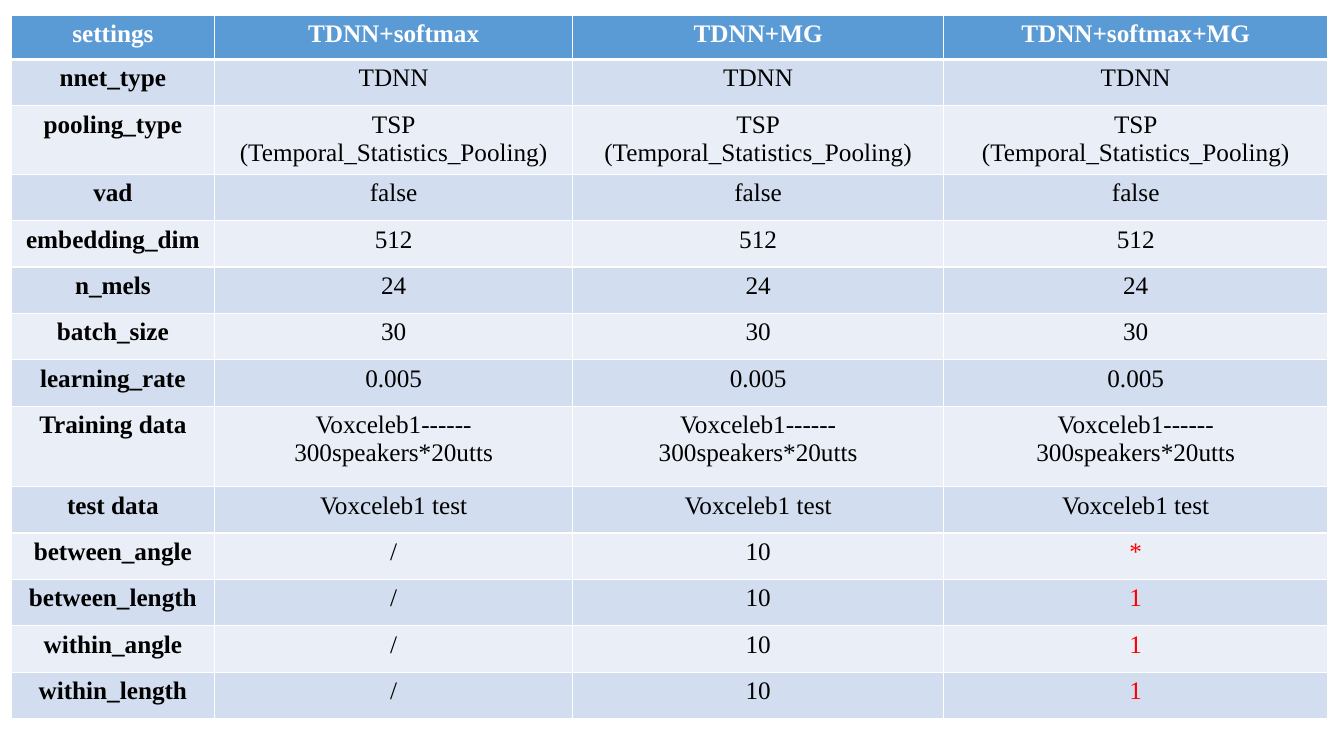
from lxml.etree import SubElement
from pptx import Presentation
from pptx.dml.color import RGBColor
from pptx.enum.text import MSO_ANCHOR, PP_ALIGN
from pptx.oxml.ns import qn
from pptx.util import Inches, Pt

COLORS = {
    "header": "5B9BD5",
    "odd": "D2DEEF",
    "even": "EAEFF7",
    "border": "FFFFFF",
    "header_text": "FFFFFF",
    "text": "000000",
    "highlight": "FF0000",
}
COL_WIDTHS = [2.02, 3.55, 3.68, 3.81]
ROW_HEIGHT = 0.46
SPECIAL_HEIGHTS = {"settings": 0.44, "pooling_type": 0.68, "Training data": 0.8}

HEADER = ["settings", "TDNN+softmax", "TDNN+MG", "TDNN+softmax+MG"]
SHARED_SETTINGS = [
    ("nnet_type", "TDNN"),
    ("pooling_type", "TSP\n(Temporal_Statistics_Pooling)"),
    ("vad", "false"),
    ("embedding_dim", "512"),
    ("n_mels", "24"),
    ("batch_size", "30"),
    ("learning_rate", "0.005"),
    ("Training data", "Voxceleb1------\n300speakers*20utts"),
    ("test data", "Voxceleb1 test"),
]
MARGIN_SETTINGS = [
    ("between_angle", "*"),
    ("between_length", "1"),
    ("within_angle", "1"),
    ("within_length", "1"),
]


class SlideBuilder:
    def __init__(self, slide, font="Times New Roman", size=18):
        self.slide = slide
        self.font = font
        self.size = size

    def color(self, name):
        return RGBColor.from_string(COLORS[name])

    def add_borders(self, cell, top=1, bottom=1):
        tc_pr = cell._tc.get_or_add_tcPr()
        for side, width in (("L", 1), ("R", 1), ("T", top), ("B", bottom)):
            ln = SubElement(tc_pr, qn(f"a:ln{side}"), w=str(Pt(width)))
            fill = SubElement(ln, qn("a:solidFill"))
            SubElement(fill, qn("a:srgbClr"), val=COLORS["border"])

    def write_cell(self, cell, text, color, bold):
        """Put each line of text in its own centred paragraph."""
        cell.vertical_anchor = MSO_ANCHOR.TOP
        tf = cell.text_frame
        for i, line in enumerate(text.split("\n")):
            p = tf.add_paragraph() if i else tf.paragraphs[0]
            p.alignment = PP_ALIGN.CENTER
            r = p.add_run()
            r.text = line
            r.font.name = self.font
            r.font.size = Pt(self.size)
            r.font.bold = bold
            r.font.color.rgb = self.color(color)

    def add_table(self, rows, left, top, highlighted):
        """Draw a banded table; highlighted labels get a red last column."""
        heights = [SPECIAL_HEIGHTS.get(row[0], ROW_HEIGHT) for row in rows]
        table = self.slide.shapes.add_table(
            len(rows), len(COL_WIDTHS), Inches(left), Inches(top),
            Inches(sum(COL_WIDTHS)), Inches(sum(heights))).table
        for column, width in zip(table.columns, COL_WIDTHS):
            column.width = Inches(width)
        for i, (row, height) in enumerate(zip(rows, heights)):
            table.rows[i].height = Inches(height)
            band = "header" if i == 0 else "odd" if i % 2 else "even"
            for j, text in enumerate(row):
                cell = table.cell(i, j)
                self.add_borders(cell, top=3 if i == 1 else 1, bottom=3 if i == 0 else 1)
                cell.fill.solid()
                cell.fill.fore_color.rgb = self.color(band)
                color = "header_text" if i == 0 else "text"
                if row[0] in highlighted and j == len(row) - 1:
                    color = "highlight"
                self.write_cell(cell, text, color, bold=i == 0 or j == 0)


def main():
    prs = Presentation()
    prs.slide_width, prs.slide_height = Inches(13.33), Inches(7.5)
    builder = SlideBuilder(prs.slides.add_slide(prs.slide_layouts[6]))
    rows = [HEADER]
    rows += [[label] + [value] * 3 for label, value in SHARED_SETTINGS]
    rows += [[label, "/", "10", value] for label, value in MARGIN_SETTINGS]
    builder.add_table(rows, 0.11, 0.15, highlighted=dict(MARGIN_SETTINGS))
    prs.save("out.pptx")


if __name__ == "__main__":
    main()
